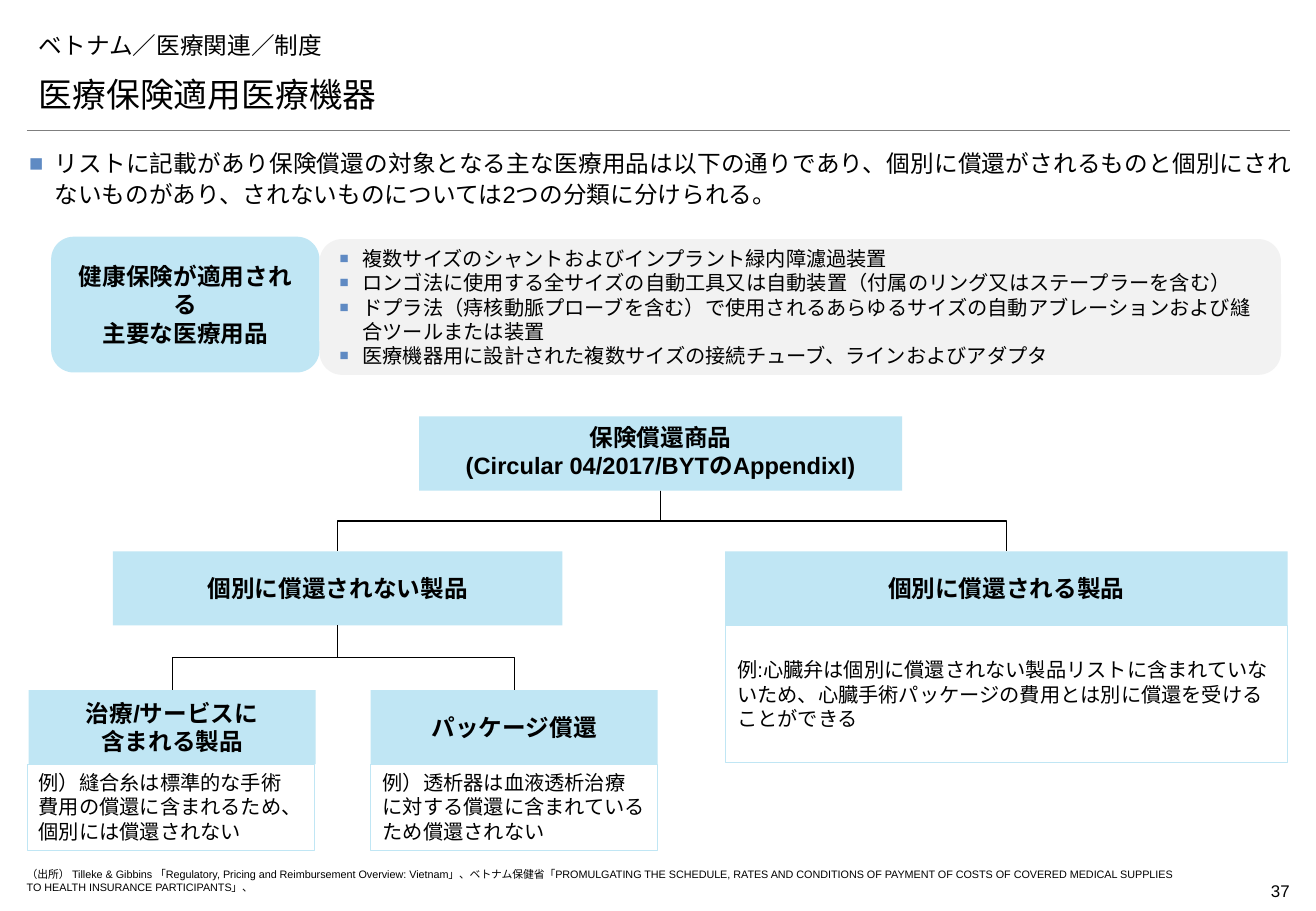
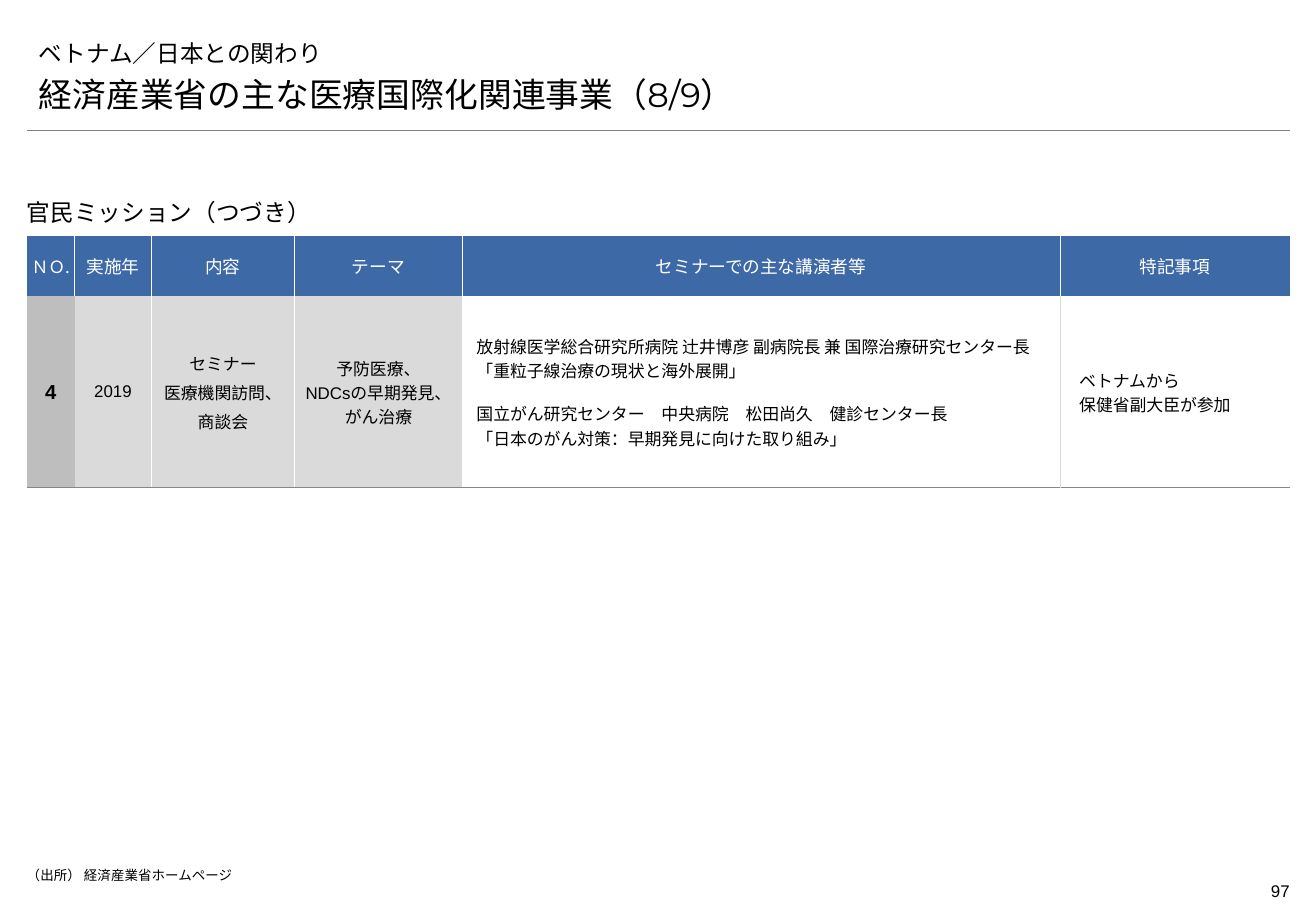
from copy import deepcopy
from dataclasses import dataclass

from lxml.etree import SubElement
from pptx import Presentation
from pptx.dml.color import RGBColor as Rgb
from pptx.enum.shapes import MSO_CONNECTOR as Link, MSO_SHAPE as Form
from pptx.enum.text import MSO_ANCHOR as Anchor, MSO_AUTO_SIZE as Auto, PP_ALIGN as Align
from pptx.oxml.ns import qn
from pptx.util import Cm, Pt


@dataclass(frozen=True)
class Theme:
    ink: Rgb = Rgb.from_string("000000")
    white: Rgb = Rgb.from_string("FFFFFF")
    sky: Rgb = Rgb.from_string("C0E6F4")
    pale: Rgb = Rgb.from_string("F2F2F2")
    mark: Rgb = Rgb.from_string("5F8AC3")
    rule: Rgb = Rgb.from_string("7F7F7F")
    head: Rgb = Rgb.from_string("3D6AA7")
    dark: Rgb = Rgb.from_string("BEBEBE")
    light: Rgb = Rgb.from_string("DADADA")
    base: Rgb = Rgb.from_string("868686")
    latin: str = "Arial"
    asian: str = "Noto Sans CJK JP"
    accent: str = "Montserrat"
    title: float = 20
    lead: float = 14
    note: float = 12
    label: float = 10.5
    small: float = 10
    source: float = 8
    tiny: float = 6.4


T = Theme()
LEFT, WIDE = 0.56, 26.4
NODE = 1.55
PAD = (0.25, 0.13)
NO_STYLE = "{2D5ABB26-0587-4C30-8999-92F81FD0307C}"


def place(left, top, wide, high):
    return Cm(left), Cm(top), Cm(wide), Cm(high)


def add_mark(para, indent, hang, scale):
    """Give a paragraph a square bullet; scale is a percentage."""
    props = para._p.get_or_add_pPr()
    props.set("marL", str(Cm(indent)))
    props.set("indent", str(-Cm(hang)))
    SubElement(SubElement(props, qn("a:buClr")), qn("a:srgbClr")).set("val", str(T.mark))
    SubElement(props, qn("a:buSzPct")).set("val", str(scale * 1000))
    SubElement(props, qn("a:buFont")).set("typeface", T.latin)
    SubElement(props, qn("a:buChar")).set("char", "■")


def write(holder, *lines, size=T.note, face=T.latin, color=T.ink, bold=False,
          align=Align.LEFT, anchor=Anchor.TOP, pad=PAD, gaps=(), after=0,
          spacing=None, mark=None):
    """Fill a text frame or table cell; gaps lists the space before each line."""
    frame = getattr(holder, "text_frame", holder)
    if frame is holder:
        frame.word_wrap = True
        frame.auto_size = Auto.NONE
    holder.vertical_anchor = anchor
    side, edge, *foot = pad
    holder.margin_left = holder.margin_right = Cm(side)
    holder.margin_top = Cm(edge)
    holder.margin_bottom = Cm(foot[0] if foot else edge)
    for i, line in enumerate(lines):
        para = frame.add_paragraph() if i else frame.paragraphs[0]
        para.text = line
        para.alignment = align
        para.space_before = Pt(gaps[i] if gaps else 0)
        para.space_after = Pt(after)
        if spacing:
            para.line_spacing = spacing
        if mark:
            add_mark(para, *mark)
        else:
            props = para._p.get_or_add_pPr()
            props.set("marL", "0")
            props.set("indent", "0")
            SubElement(props, qn("a:buNone"))
        for run in para.runs:
            font = run.font
            font.size, font.name, font.bold = Pt(size), face, bold
            font.color.rgb = color
            SubElement(run._r.get_or_add_rPr(), qn("a:ea")).set("typeface", T.asian)
        for turn in para._p.findall(qn("a:br")):
            turn.insert(0, deepcopy(para.runs[0]._r.rPr))


def add_text(slide, spot, *lines, **style):
    write(slide.shapes.add_textbox(*place(*spot)).text_frame, *lines, **style)


def fill_holder(slide, index, spot, *lines, **style):
    holder = slide.placeholders[index]
    holder.left, holder.top, holder.width, holder.height = place(*spot)
    write(holder.text_frame, *lines, **style)


def add_box(slide, spot, *lines, form=Form.RECTANGLE, fill=None, **style):
    """Draw a filled box, or an outlined one when fill is None."""
    box = slide.shapes.add_shape(form, *place(*spot))
    box.shadow.inherit = False
    if fill:
        box.fill.solid()
        box.fill.fore_color.rgb = fill
        box.line.fill.background()
    else:
        box.fill.background()
        box.line.color.rgb = T.sky
        box.line.width = Pt(0.25)
    write(box.text_frame, *lines, **style)
    return box


def add_node(slide, left, top, wide, *lines, **style):
    style = dict(anchor=Anchor.MIDDLE, pad=(0.03, 0.03)) | style
    return add_box(slide, (left, top, wide, NODE), *lines, fill=T.sky,
                   size=T.lead, bold=True, align=Align.CENTER, **style)


def add_line(slide, kind, ends, color, width):
    line = slide.shapes.add_connector(kind, *ends)
    line.line.color.rgb = color
    line.line.width = Pt(width)
    SubElement(line._element.spPr, qn("a:effectLst"))
    return line


def join(slide, upper, lower):
    """Link two nodes with an elbow that leaves downwards."""
    x1, y1 = upper.left + upper.width // 2, upper.top + upper.height
    x2, y2 = lower.left + lower.width // 2, lower.top
    line = add_line(slide, Link.ELBOW, (x1, y1, x2, y2), T.ink, 0.75)
    line.begin_connect(upper, 2)
    line.end_connect(lower, 0)
    drop, span = y2 - y1, abs(x2 - x1)
    line.left, line.top = (x1 + x2 - drop) // 2, (y1 + y2 - span) // 2
    line.width, line.height = drop, span
    frame, right = line._element.spPr.xfrm, x2 > x1
    frame.set("rot", str((270 if right else 90) * 60000))
    frame.set("flipH", "1" if right else "0")


def add_edges(cell, **edges):
    """Set cell borders, named by side in the order L, R, B."""
    props = cell._tc.get_or_add_tcPr()
    shown = [(side, color) for side, color in edges.items() if color]
    for i, (side, color) in enumerate(shown):
        line = SubElement(props, qn(f"a:ln{side}"))
        line.set("w", str(Pt(0.5)))
        SubElement(SubElement(line, qn("a:solidFill")), qn("a:srgbClr")).set("val", str(color))
        props.insert(i, line)


def add_grid(slide, spot, cols, rows, cells, seams):
    """Build a table; cells hold (fill, lines, style), seams the inner rules."""
    shape = slide.shapes.add_table(len(rows), len(cols), *place(*spot))
    table = shape.table
    table.first_row = table.horz_banding = False
    table._tbl.tblPr.find(qn("a:tableStyleId")).text = NO_STYLE
    for col, wide in zip(table.columns, cols):
        col.width = Cm(wide)
    for row, high in zip(table.rows, rows):
        row.height = Cm(high)
    for r, line in enumerate(cells):
        rules = [None, *seams[r], None]
        for c, (fill, lines, style) in enumerate(line):
            cell = table.cell(r, c)
            cell.fill.solid()
            cell.fill.fore_color.rgb = fill
            write(cell, *lines, anchor=Anchor.MIDDLE, **style)
            add_edges(cell, L=rules[c], R=rules[c + 1], B=T.base if r else None)


def start(deck, page, topic, top, title, source, size, faces=(T.latin, T.latin)):
    """Add a slide with its titles, rule, source line and page number."""
    slide = deck.slides.add_slide(deck.slide_layouts[3])
    fill_holder(slide, 0, (LEFT, top, WIDE, 1), topic, size=T.lead,
                face=faces[0], anchor=Anchor.BOTTOM)
    fill_holder(slide, 1, (LEFT, 1.52, WIDE, 1), title, size=T.title,
                face=faces[1], anchor=Anchor.BOTTOM)
    add_line(slide, Link.STRAIGHT, (Cm(LEFT), Cm(2.72), Cm(LEFT + WIDE), Cm(2.72)),
             T.rule, 0.25)
    add_text(slide, (LEFT, 18.14, 24, 0.41), source, size=size, pad=(0, 0))
    add_text(slide, (24.96, 18.29, 2, 0.69), page, size=T.small,
             align=Align.RIGHT, pad=(0, 0.13))
    return slide


def draw_devices(deck):
    slide = start(
        deck, "37", "ベトナム／医療関連／制度", 0.38, "医療保険適用医療機器",
        "（出所） Tilleke & Gibbins 「Regulatory, Pricing and Reimbursement Overview: "
        "Vietnam」、ベトナム保健省「PROMULGATING THE SCHEDULE, RATES AND CONDITIONS OF "
        "PAYMENT OF COSTS OF COVERED MEDICAL SUPPLIES TO HEALTH INSURANCE PARTICIPANTS」、",
        T.tiny)
    fill_holder(
        slide, 2, (0.61, 3.05, WIDE, 1.27),
        "リストに記載があり保険償還の対象となる主な医療用品は以下の通りであり、"
        "個別に償還がされるものと個別にされないものがあり、"
        "されないものについては2つの分類に分けられる。",
        size=T.lead, align=Align.JUSTIFY, pad=(0, 0), spacing=1.1, after=2,
        mark=(0.53, 0.53, 100))
    add_box(slide, (1.07, 4.95, 5.61, 2.84), "健康保険が適用される\n主要な医療用品",
            form=Form.ROUNDED_RECTANGLE, fill=T.sky, size=T.lead, bold=True,
            align=Align.CENTER, anchor=Anchor.MIDDLE)
    add_box(slide, (6.68, 5, 20.1, 2.84),
            "複数サイズのシャントおよびインプラント緑内障濾過装置",
            "ロンゴ法に使用する全サイズの自動工具又は自動装置（付属のリング又はステープラーを含む）",
            "ドプラ法（痔核動脈プローブを含む）で使用されるあらゆるサイズの"
            "自動アブレーションおよび縫合ツールまたは装置",
            "医療機器用に設計された複数サイズの接続チューブ、ラインおよびアダプタ",
            form=Form.ROUNDED_RECTANGLE, fill=T.pale, anchor=Anchor.MIDDLE,
            mark=(0.51, 0.48, 75))

    root = add_node(slide, 8.76, 8.71, 10.1,
                    "保険償還商品\n(Circular 04/2017/BYTのAppendixI)",
                    anchor=Anchor.TOP, pad=PAD)
    joint = add_node(slide, 2.36, 11.53, 9.4, "個別に償還されない製品")
    single = add_node(slide, 15.16, 11.53, 11.76, "個別に償還される製品")
    care = add_node(slide, 0.6, 14.43, 6, "治療/サービスに\n含まれる製品")
    pack = add_node(slide, 7.75, 14.43, 6, "パッケージ償還")
    for upper, lower in ((root, joint), (root, single), (joint, care), (joint, pack)):
        join(slide, upper, lower)
    mid, foot = root.left + root.width // 2, root.top + root.height
    stem = add_line(slide, Link.STRAIGHT, (mid, foot, mid, Cm(10.92)), T.ink, 0.25)
    stem.begin_connect(root, 2)

    add_box(slide, (LEFT, 15.98, 6, 1.8),
            "例）縫合糸は標準的な手術費用の償還に含まれるため、個別には償還されない")
    add_box(slide, (7.75, 15.98, 6, 1.8),
            "例）透析器は血液透析治療に対する償還に含まれているため償還されない")
    add_box(slide, (15.16, 13.08, 11.76, 2.87),
            "例:心臓弁は個別に償還されない製品リストに含まれていないため、"
            "心臓手術パッケージの費用とは別に償還を受けることができる",
            anchor=Anchor.MIDDLE)


def draw_missions(deck):
    slide = start(deck, "97", "ベトナム／日本との関わり", 0.53,
                  "経済産業省の主な医療国際化関連事業（8/9）",
                  "（出所） 経済産業省ホームページ", T.source, (T.asian, T.accent))
    fill_holder(slide, 2, (LEFT, 3.94, WIDE, 1), "官民ミッション（つづき）",
                size=T.lead, face=T.accent, anchor=Anchor.BOTTOM, pad=(0, 0.13, 0.2))
    heads = ("ＮＯ.", "実施年", "内容", "テーマ", "セミナーでの主な講演者等", "特記事項")
    top = [(T.head, [name], dict(size=T.label if i else T.small, face=T.asian,
                                 color=T.white, align=Align.CENTER, pad=(0.1, 0.13)))
           for i, name in enumerate(heads)]
    plain = dict(size=T.small)
    tight = dict(size=T.small, align=Align.CENTER, pad=(0.1, 0.08))
    mid = tight | dict(pad=(0.2, 0.08))
    body = [
        (T.dark, ["4"], tight | dict(size=T.note, bold=True)),
        (T.light, ["2019"], tight),
        (T.light, ["セミナー", "医療機関訪問、", "商談会"], mid | dict(gaps=(0, 3, 3))),
        (T.light, ["予防医療、\nNDCsの早期発見、", "がん治療"], mid),
        (T.white, ["放射線医学総合研究所病院 辻井博彦 副病院長 兼 国際治療研究センター長",
                   "「重粒子線治療の現状と海外展開」",
                   "国立がん研究センター　中央病院　松田尚久　健診センター長",
                   "「日本のがん対策：早期発見に向けた取り組み」"],
         plain | dict(pad=(0.3, 0.2), gaps=(0, 0, 11, 0))),
        (T.white, ["ベトナムから\n保健省副大臣が参加"], plain | dict(pad=(0.4, 0.2))),
    ]
    add_grid(slide, (LEFT, 4.93, WIDE, 5.27), (1, 1.6, 3, 3.5, 12.5, 4.8), (1.27, 4),
             (top, body), ([T.white] * 5, [None, *[T.white] * 3, T.light]))


def main():
    deck = Presentation()
    deck.slide_width, deck.slide_height = Cm(27.51), Cm(19.05)
    draw_devices(deck)
    draw_missions(deck)
    deck.save("out.pptx")


if __name__ == "__main__":
    main()
